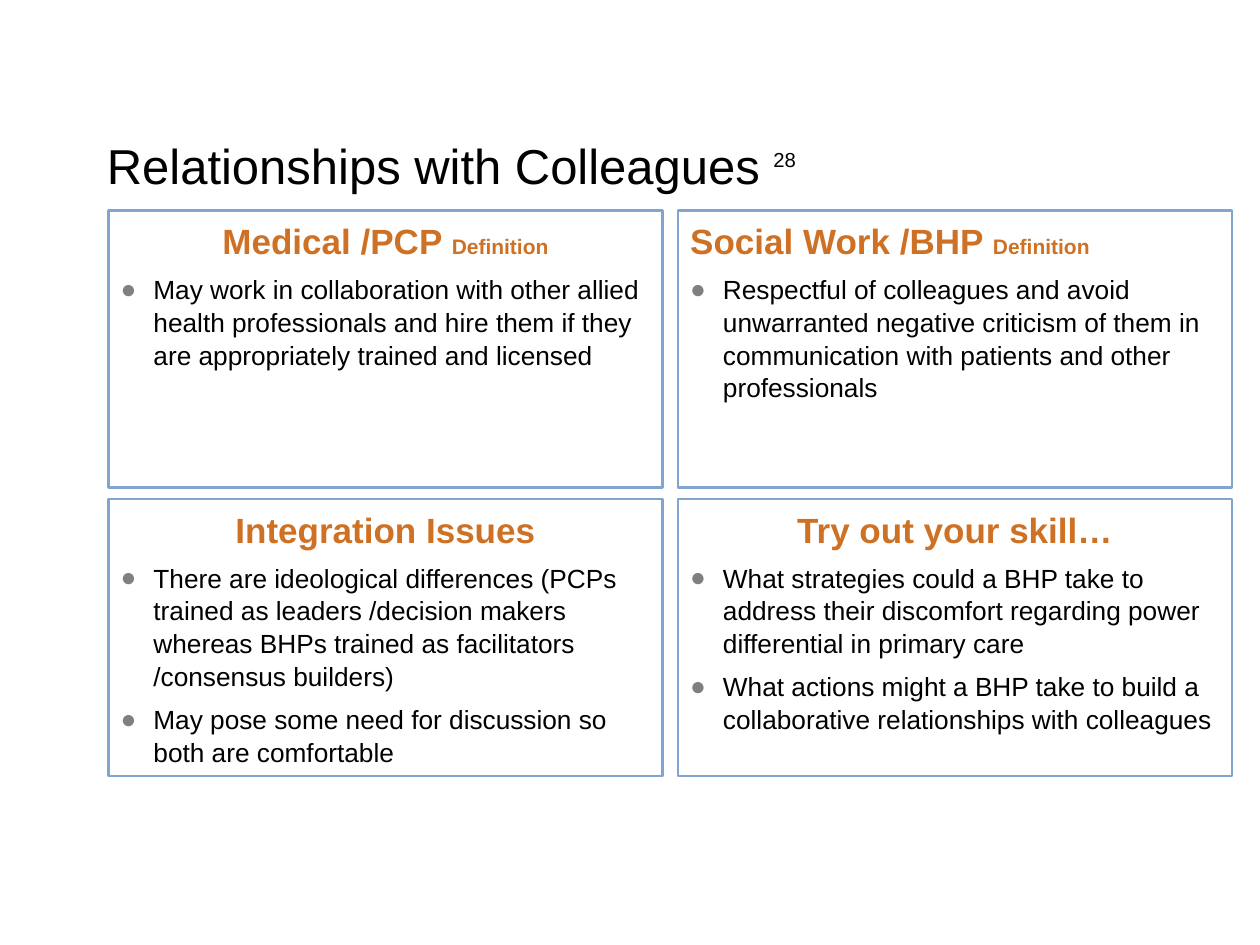
from dataclasses import dataclass

import pptx
import pptx.dml.color
import pptx.enum.shapes
import pptx.enum.text
import pptx.oxml.ns
import pptx.util
from lxml import etree

RGBColor = pptx.dml.color.RGBColor
Inches = pptx.util.Inches
Pt = pptx.util.Pt
ALIGN = pptx.enum.text.PP_ALIGN

BLACK = RGBColor(0x00, 0x00, 0x00)
ORANGE = RGBColor(0xCE, 0x71, 0x24)
BLUE = RGBColor(0x82, 0xA5, 0xD0)
BULLET_GRAY = RGBColor(0x80, 0x80, 0x80)

FONT = "Arial"
LINE_SPACING = 1.04
GRID_LEFT, GRID_TOP = 0.86, 1.67
PANEL_WIDTH, PANEL_HEIGHT = 4.4, 2.2
COLUMN_STEP, ROW_STEP = 4.52, 2.29
BULLET_INDENT = 0.26


@dataclass
class Panel:
    column: int
    row: int
    heading: str
    bullets: list[str]
    suffix: str = ""
    align: ALIGN = ALIGN.CENTER


PANELS = [
    Panel(0, 0, "Medical /PCP ", [
        "May work in collaboration with other allied health professionals "
        "and hire them if they are appropriately trained and licensed",
    ], "Definition"),
    Panel(1, 0, "Social Work /BHP ", [
        "Respectful of colleagues and avoid unwarranted negative criticism "
        "of them in communication with patients and other professionals",
    ], "Definition", ALIGN.LEFT),
    Panel(0, 1, "Integration Issues", [
        "There are ideological differences (PCPs trained as leaders /decision "
        "makers whereas BHPs trained as facilitators /consensus builders)",
        "May pose some need for discussion so both are comfortable",
    ]),
    Panel(1, 1, "Try out your skill…", [
        "What strategies could a BHP take to address their discomfort "
        "regarding power differential in primary care",
        "What actions might a BHP take to build a collaborative "
        "relationships with colleagues",
    ]),
]


def add_run(p, text: str, size: float, color: RGBColor, bold: bool = False):
    r = p.add_run()
    r.text = text
    r.font.name = FONT
    r.font.size = Pt(size)
    r.font.bold = bold
    r.font.color.rgb = color
    return r


def set_bullet(p) -> None:
    pPr = p._p.get_or_add_pPr()
    pPr.set("marL", str(Inches(BULLET_INDENT)))
    pPr.set("indent", str(-Inches(BULLET_INDENT)))
    qn = pptx.oxml.ns.qn
    color = etree.SubElement(pPr, qn("a:buClr"))
    etree.SubElement(color, qn("a:srgbClr"), val=str(BULLET_GRAY))
    etree.SubElement(pPr, qn("a:buFont"), typeface=FONT)
    etree.SubElement(pPr, qn("a:buChar"), char="●")


def prepare_text(sp):
    tf = sp.text_frame
    tf.word_wrap = True
    tf.vertical_anchor = pptx.enum.text.MSO_ANCHOR.TOP
    tf.margin_top = Inches(0.06)
    tf.paragraphs[0].line_spacing = LINE_SPACING
    return tf


def add_title(s) -> None:
    sp = s.shapes.add_textbox(Inches(0.75), Inches(1), Inches(8.75), Inches(0.92))
    p = prepare_text(sp).paragraphs[0]
    add_run(p, "Relationships with Colleagues ", 28, BLACK)
    reference = add_run(p, "28", 20, BLACK)
    reference.font._element.set("baseline", "50000")


def add_panel(s, panel: Panel) -> None:
    sp = s.shapes.add_shape(
        pptx.enum.shapes.MSO_SHAPE.RECTANGLE,
        Inches(GRID_LEFT + panel.column * COLUMN_STEP),
        Inches(GRID_TOP + panel.row * ROW_STEP),
        Inches(PANEL_WIDTH), Inches(PANEL_HEIGHT))
    sp.shadow.inherit = False
    sp.fill.background()
    sp.line.color.rgb = BLUE
    sp.line.width = Pt(1.5)

    tf = prepare_text(sp)
    p = tf.paragraphs[0]
    p.alignment = panel.align
    add_run(p, panel.heading, 20, ORANGE, bold=True)
    if panel.suffix:
        add_run(p, panel.suffix, 12, ORANGE, bold=True)
    for text in panel.bullets:
        p = tf.add_paragraph()
        p.alignment = ALIGN.LEFT
        p.line_spacing = LINE_SPACING
        p.space_before = Pt(6)
        set_bullet(p)
        add_run(p, text, 15, BLACK)


def main() -> None:
    prs = pptx.Presentation()
    prs.slide_width, prs.slide_height = Inches(10), Inches(7.5)
    s = prs.slides.add_slide(prs.slide_layouts[6])
    add_title(s)
    for panel in PANELS:
        add_panel(s, panel)
    prs.save("out.pptx")


if __name__ == "__main__":
    main()
